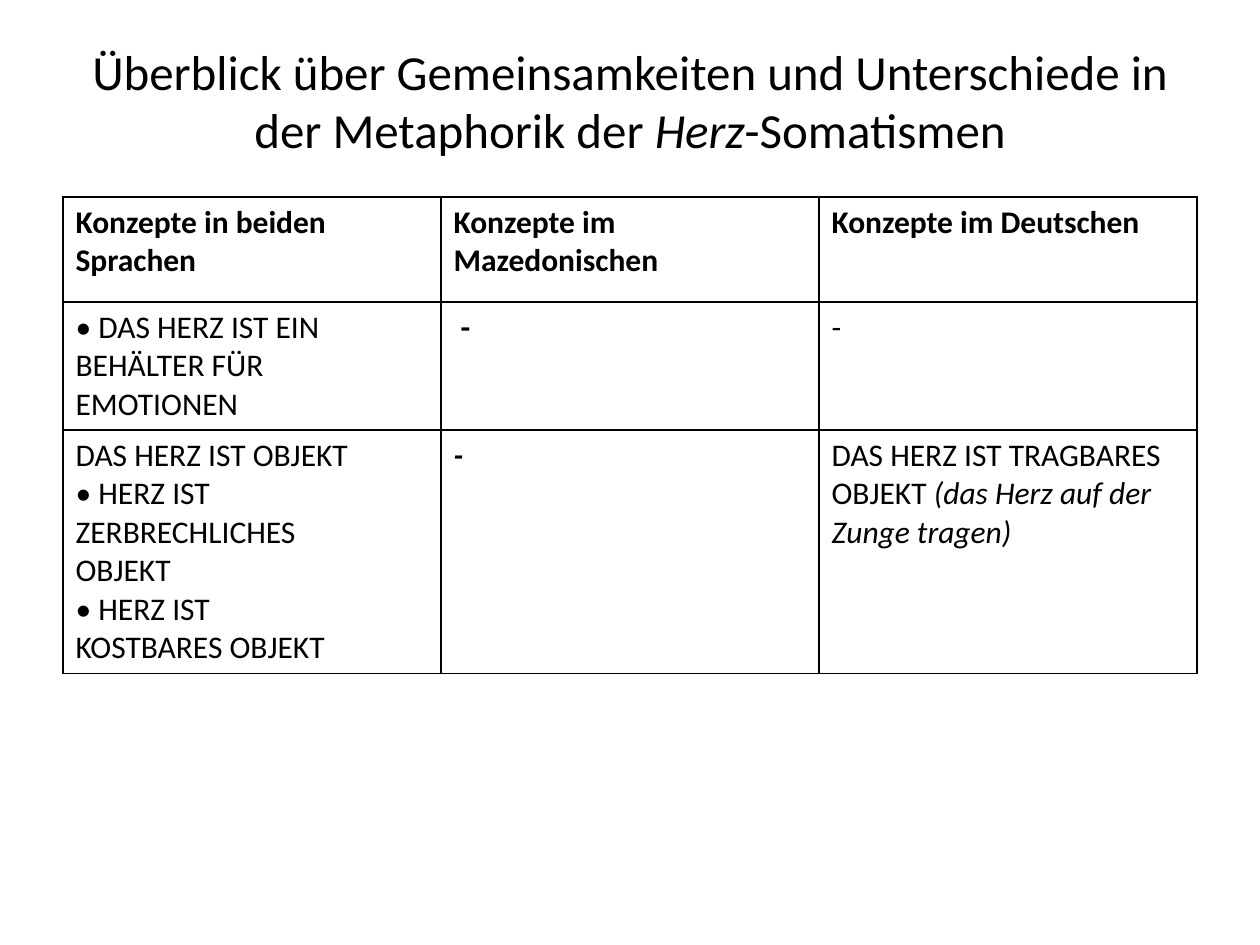
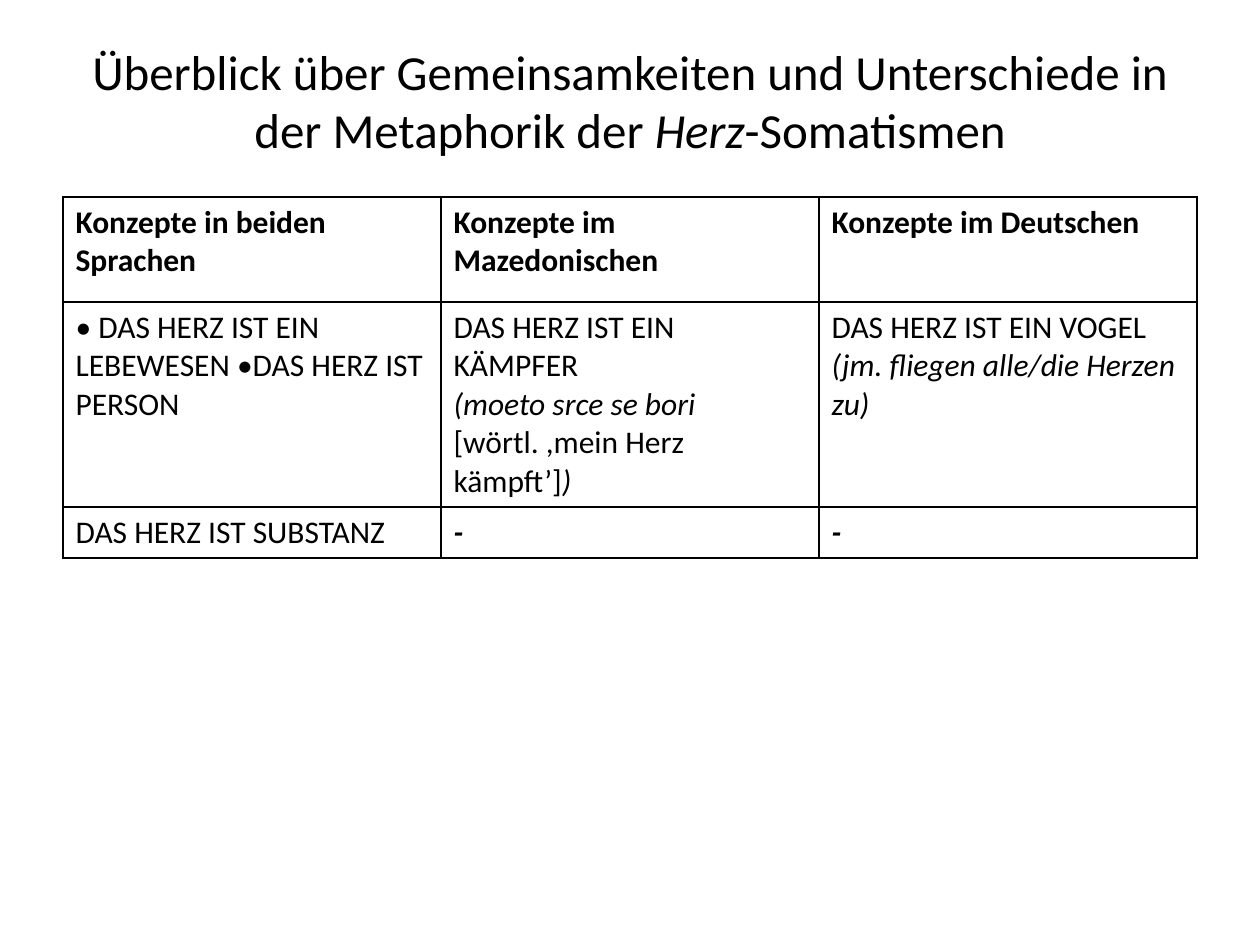
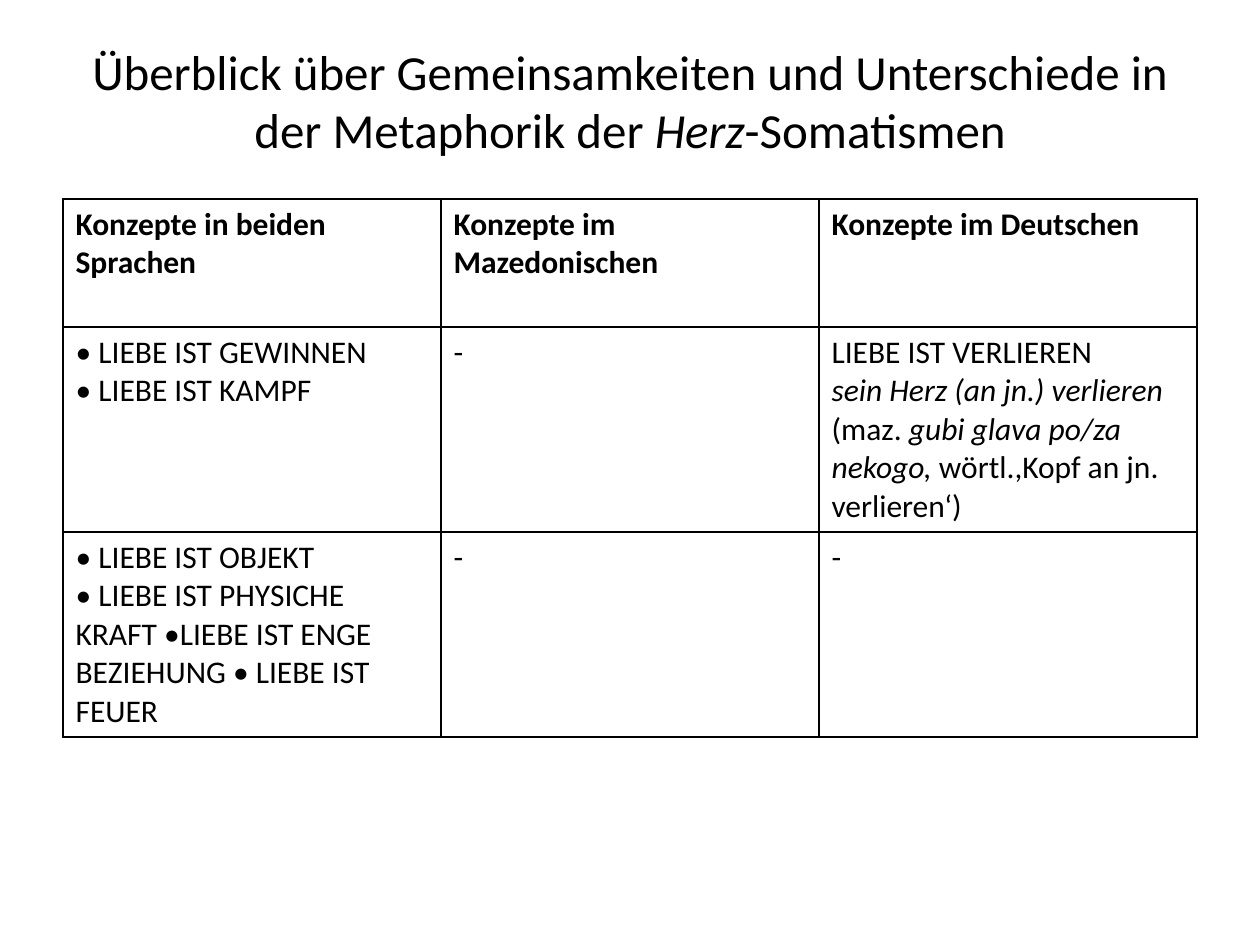
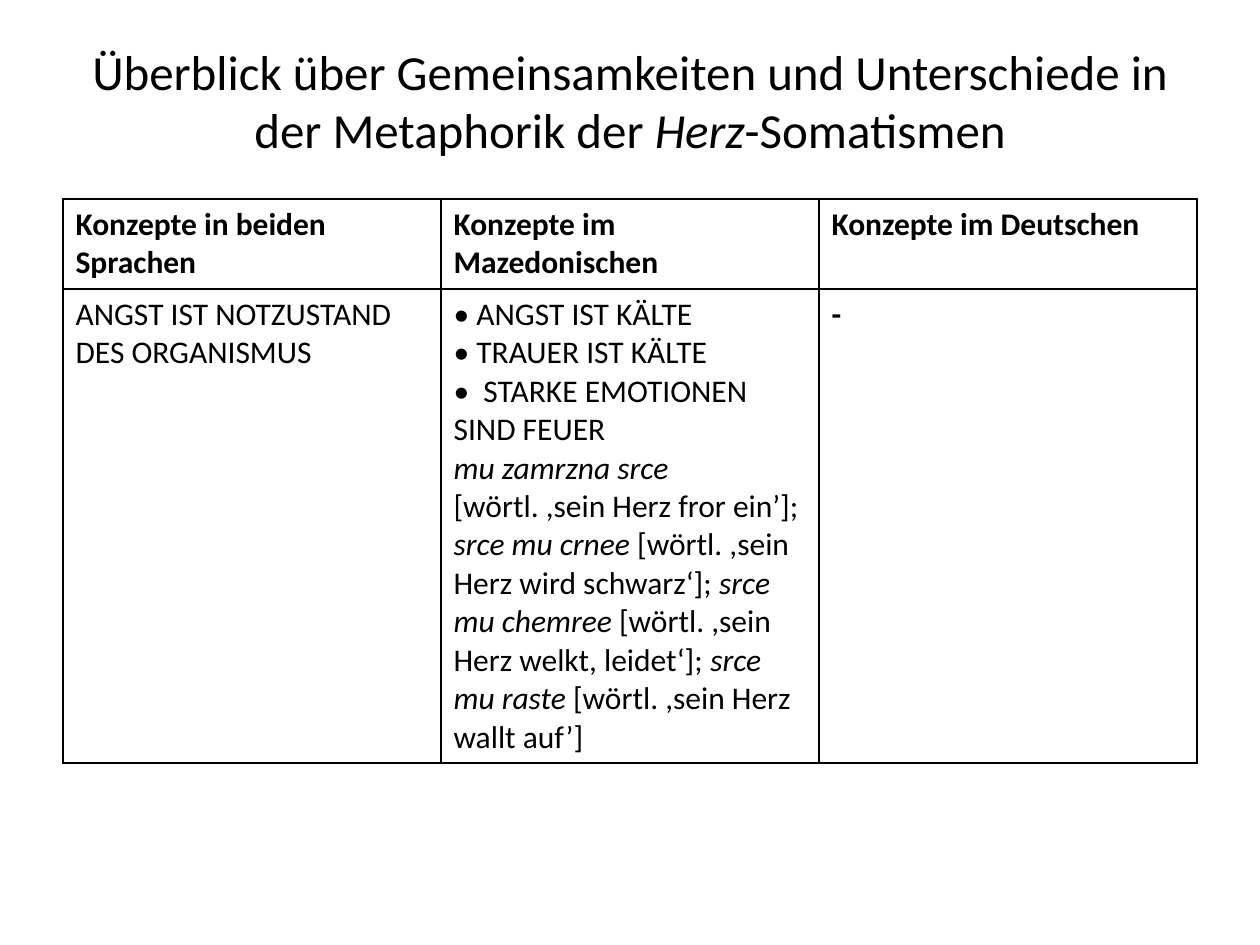
from dataclasses import dataclass

from lxml import etree
from pptx import Presentation
from pptx.dml.color import RGBColor
from pptx.enum.text import MSO_ANCHOR, PP_ALIGN
from pptx.oxml.ns import qn
from pptx.util import Pt

MIDDLE = MSO_ANCHOR.MIDDLE
CENTER = PP_ALIGN.CENTER
TITLE_ONLY = 5
SCALE = 914400 / 126
COLORS = {"ink": "000000", "paper": "FFFFFF"}
TITLE_FONT = {"name": "Calibri", "size": Pt(28), "bold": False}
CELL_FONT = {"name": "Calibri", "size": Pt(18)}
TABLE_FLAGS = {"first_row": False, "horz_banding": False}
LEFT, WIDTH = 63, 1134
TITLE_TOP, TITLE_HIGH = 21, 158
MARK = "_"
TITLE = (
    "Überblick über Gemeinsamkeiten und Unterschiede in "
    "der Metaphorik der _Herz_-Somatismen"
)


@dataclass(frozen=True)
class Cell:
    text: str
    bold: bool = False


@dataclass(frozen=True)
class Page:
    top: int
    heights: tuple[int, ...]
    rows: tuple[tuple[Cell, ...], ...]


DASH = Cell("-")
BOLD_DASH = Cell("-", True)
SLANT_DASH = Cell("_-_", True)
HEAD = (
    Cell("Konzepte in beiden Sprachen", True),
    Cell("Konzepte im Mazedonischen", True),
    Cell("Konzepte im Deutschen", True),
)

PAGES = (
    Page(197, (105, 128, 243), (
        (
            Cell("• DAS HERZ IST EIN\nBEHÄLTER FÜR\nEMOTIONEN"),
            Cell(" -", True),
            DASH,
        ),
        (
            Cell(
                "DAS HERZ IST OBJEKT\n• HERZ IST\nZERBRECHLICHES\nOBJEKT\n"
                "• HERZ IST\nKOSTBARES OBJEKT"
            ),
            SLANT_DASH,
            Cell(
                "DAS HERZ IST TRAGBARES\n"
                "OBJEKT _(das Herz auf der Zunge tragen)_"
            ),
        ),
    )),
    Page(197, (105, 205, 51), (
        (
            Cell("• DAS HERZ IST EIN LEBEWESEN •DAS HERZ IST PERSON"),
            Cell(
                "DAS HERZ IST EIN KÄMPFER\n"
                "_(moeto srce se bori _[wörtl. ,mein Herz kämpft’]_)_"
            ),
            Cell(
                "DAS HERZ IST EIN VOGEL\n"
                "_(jm. fliegen alle/die Herzen zu)_"
            ),
        ),
        (Cell("DAS HERZ IST SUBSTANZ"), SLANT_DASH, SLANT_DASH),
    )),
    Page(199, (128, 205, 205), (
        (
            Cell("• LIEBE IST GEWINNEN\n• LIEBE IST KAMPF"),
            DASH,
            Cell(
                "LIEBE IST VERLIEREN\n_sein Herz (an jn.) verlieren _(maz. "
                "_gubi glava po/za nekogo, _wörtl.,Kopf an jn. verlieren‘)"
            ),
        ),
        (
            Cell(
                "• LIEBE IST OBJEKT\n• LIEBE IST PHYSICHE KRAFT "
                "•LIEBE IST ENGE BEZIEHUNG • LIEBE IST FEUER"
            ),
            DASH,
            DASH,
        ),
    )),
    Page(199, (90, 474), (
        (
            Cell("ANGST IST NOTZUSTAND DES ORGANISMUS"),
            Cell(
                "• ANGST IST KÄLTE\n• TRAUER IST KÄLTE\n"
                "•  STARKE EMOTIONEN SIND FEUER\n"
                "_mu zamrzna srce _[wörtl. ,sein Herz fror ein’]; "
                "_srce mu crnee _[wörtl. ,sein Herz wird schwarz‘]; "
                "_srce mu chemree _[wörtl. ,sein Herz welkt, leidet‘]; "
                "_srce mu raste _[wörtl. ,sein Herz wallt auf’]"
            ),
            BOLD_DASH,
        ),
    )),
)


def px(size: int) -> int:
    return round(size * SCALE)


def assign(target, values: dict) -> None:
    for name, value in values.items():
        setattr(target, name, value)


def write(frame, text: str, style: dict) -> None:
    for row, line in enumerate(text.split("\n")):
        para = frame.add_paragraph() if row else frame.paragraphs[0]
        for part, words in enumerate(line.split(MARK)):
            if words:
                run = para.add_run()
                run.text = words
                assign(run.font, {**style, "italic": part % 2 == 1})
                run.font.color.rgb = RGBColor.from_string(COLORS["ink"])


def border(cell) -> None:
    props = cell._tc.get_or_add_tcPr()
    for side in ("a:lnL", "a:lnR", "a:lnT", "a:lnB"):
        line = etree.SubElement(props, qn(side), w=str(Pt(1)))
        fill = etree.SubElement(line, qn("a:solidFill"))
        etree.SubElement(fill, qn("a:srgbClr"), val=COLORS["ink"])


def add_title(slide) -> None:
    title = slide.shapes.title
    assign(title, {
        "left": px(LEFT), "top": px(TITLE_TOP),
        "width": px(WIDTH), "height": px(TITLE_HIGH),
    })
    frame = title.text_frame
    assign(frame, {"word_wrap": True, "vertical_anchor": MIDDLE})
    write(frame, TITLE, TITLE_FONT)
    frame.paragraphs[0].alignment = CENTER


def add_grid(slide, page: Page) -> None:
    rows = (HEAD, *page.rows)
    table = slide.shapes.add_table(
        len(rows), len(HEAD), px(LEFT), px(page.top),
        px(WIDTH), px(sum(page.heights)),
    ).table
    assign(table, TABLE_FLAGS)
    for column in table.columns:
        column.width = px(WIDTH // len(HEAD))
    for row, (height, items) in enumerate(zip(page.heights, rows)):
        table.rows[row].height = px(height)
        for col, item in enumerate(items):
            cell = table.cell(row, col)
            border(cell)
            cell.fill.background()
            write(cell.text_frame, item.text, {**CELL_FONT, "bold": item.bold})


def main() -> None:
    deck = Presentation()
    assign(deck, {"slide_width": px(1260), "slide_height": px(945)})
    back = deck.slide_master.background.fill
    back.solid()
    back.fore_color.rgb = RGBColor.from_string(COLORS["paper"])
    for page in PAGES:
        slide = deck.slides.add_slide(deck.slide_layouts[TITLE_ONLY])
        add_title(slide)
        add_grid(slide, page)
    deck.save("out.pptx")


if __name__ == "__main__":
    main()
